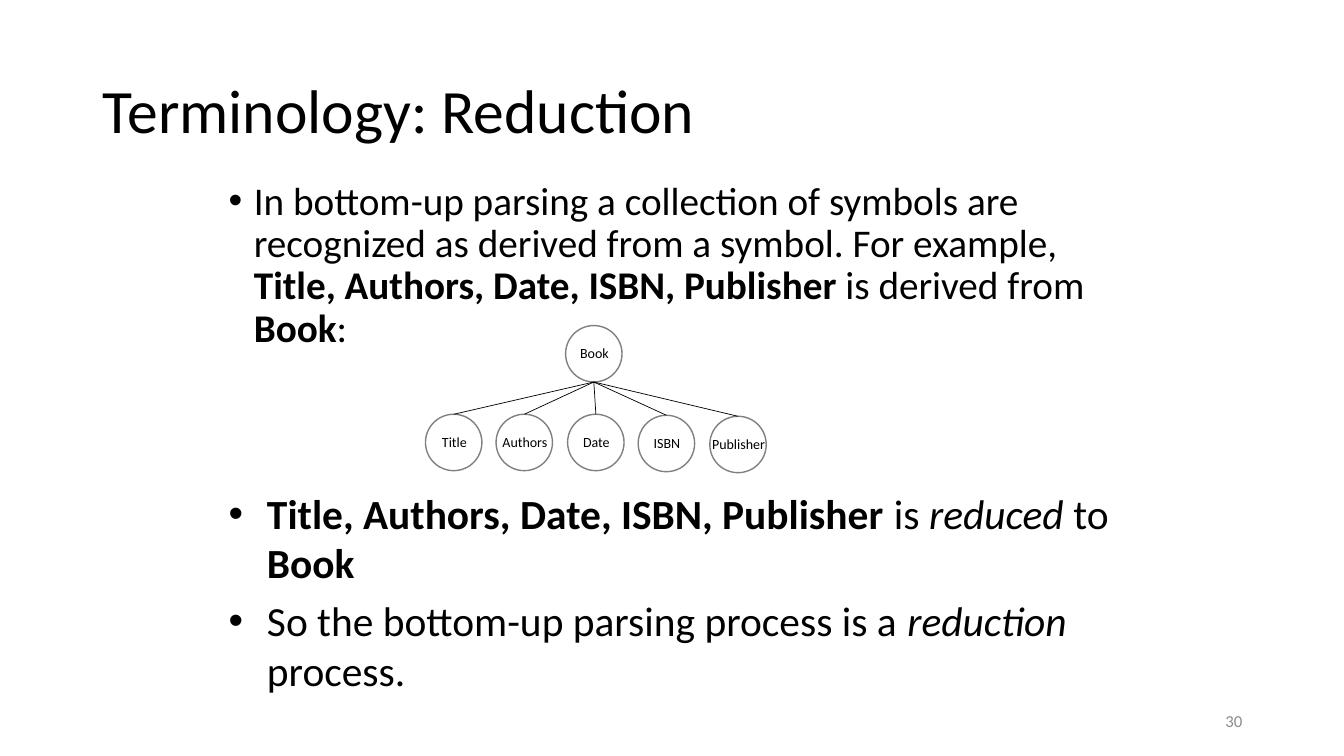
import pptx
import pptx.dml.color
import pptx.enum.shapes
import pptx.enum.text
import pptx.oxml.ns
import pptx.util
from dataclasses import dataclass
from lxml import etree
from pptx.util import Inches

ALIGN = pptx.enum.text.PP_ALIGN
ANCHOR = pptx.enum.text.MSO_ANCHOR


@dataclass(frozen=True)
class Theme:
    font: str = "Calibri"
    ink: str = "000000"
    muted: str = "8C8C8C"
    paper: str = "FFFFFF"
    outline: str = "808080"
    title_size: float = 44
    intro_size: float = 28
    conclusion_size: float = 29.6
    node_size: float = 10
    number_size: float = 12


THEME = Theme()
NODE_DIAMETER = 0.56
ROOT = ("Book", 5.61, 3.23, 0.49)
# Label, circle left, circle top, label width
LEAVES = [
    ("Title", 4.22, 4.11, 0.45),
    ("Authors", 4.92, 4.11, 0.65),
    ("Date", 5.63, 4.11, 0.47),
    ("ISBN", 6.33, 4.12, 0.47),
    ("Publisher", 7.04, 4.13, 0.73),
]
SYMBOLS = ", ".join(leaf[0] for leaf in LEAVES) + " "


def color(value):
    return pptx.dml.color.RGBColor.from_string(value)


def place(shape, left, top, width, height):
    shape.left, shape.top = Inches(left), Inches(top)
    shape.width, shape.height = Inches(width), Inches(height)


def add_bullet(para, indent):
    properties = para._p.get_or_add_pPr()
    properties.set("marL", str(Inches(indent)))
    properties.set("indent", str(-Inches(indent)))
    font = etree.SubElement(properties, pptx.oxml.ns.qn("a:buFont"))
    font.set("typeface", "Arial")
    bullet = etree.SubElement(properties, pptx.oxml.ns.qn("a:buChar"))
    bullet.set("char", "•")


def write_text(frame, paragraphs, *, size, ink=THEME.ink, align=ALIGN.LEFT,
               anchor=ANCHOR.TOP, wrap=True, line_spacing=None,
               space_before=0, bullet_indent=None):
    """Fill a frame; each paragraph is a list of (text, style) spans."""
    frame.auto_size = pptx.enum.text.MSO_AUTO_SIZE.NONE
    frame.word_wrap = wrap
    frame.vertical_anchor = anchor
    for index, spans in enumerate(paragraphs):
        para = frame.add_paragraph() if index else frame.paragraphs[0]
        para.alignment = align
        para.space_before = pptx.util.Pt(space_before)
        if line_spacing:
            para.line_spacing = line_spacing
        if bullet_indent:
            add_bullet(para, bullet_indent)
        for text, style in spans:
            span = para.add_run()
            span.text = text
            span.font.name = THEME.font
            span.font.size = pptx.util.Pt(size)
            span.font.color.rgb = color(ink)
            span.font.bold = style == "bold"
            span.font.italic = style == "italic"


def add_text(page, box, paragraphs, **text_format):
    shape = page.shapes.add_textbox(*map(Inches, box))
    write_text(shape.text_frame, paragraphs, **text_format)


def add_node(page, label, left, top, label_width):
    circle = page.shapes.add_shape(
        pptx.enum.shapes.MSO_SHAPE.OVAL, Inches(left), Inches(top),
        Inches(NODE_DIAMETER), Inches(NODE_DIAMETER))
    circle.shadow.inherit = False
    circle.fill.solid()
    circle.fill.fore_color.rgb = color(THEME.paper)
    circle.line.color.rgb = color(THEME.outline)
    circle.line.width = pptx.util.Pt(1)
    label_left = left + (NODE_DIAMETER - label_width) / 2 + 0.01
    add_text(page, (label_left, top + 0.14, label_width, 0.27),
             [[(label, "plain")]], size=THEME.node_size, wrap=False)
    return circle


def add_branch(page, parent, child):
    # Bottom of the parent circle to the top of the child circle
    branch = page.shapes.add_connector(
        pptx.enum.shapes.MSO_CONNECTOR.STRAIGHT,
        parent.left + parent.width // 2, parent.top + parent.height,
        child.left + child.width // 2, child.top)
    branch.line.color.rgb = color(THEME.ink)
    branch.line.width = pptx.util.Pt(0.5)
    etree.SubElement(branch._element.spPr, pptx.oxml.ns.qn("a:effectLst"))


def add_tree(page):
    root = add_node(page, *ROOT)
    leaves = [add_node(page, *leaf) for leaf in LEAVES]
    for leaf in leaves:
        add_branch(page, root, leaf)


def main():
    deck = pptx.Presentation()
    deck.slide_width, deck.slide_height = Inches(13.33), Inches(7.5)
    page = deck.slides.add_slide(deck.slide_layouts.get_by_name("Title Only"))

    # Title
    title = page.shapes.title
    place(title, 0.92, 0.4, 11.5, 1.45)
    write_text(title.text_frame, [[("Terminology: Reduction", "plain")]],
               size=THEME.title_size, anchor=ANCHOR.MIDDLE, line_spacing=0.9)

    # Introduction
    add_text(page, (2.17, 1.75, 9, 1.92), [[
        ("In bottom-up parsing a collection of symbols are recognized as "
         "derived from a symbol. For example, ", "plain"),
        (SYMBOLS, "bold"), ("is derived from ", "plain"),
        ("Book", "bold"), (":", "plain"),
    ]], size=THEME.intro_size, line_spacing=0.9, space_before=10,
        bullet_indent=0.25)

    # Page number
    add_text(page, (9.42, 6.95, 3, 0.4), [[("30", "plain")]],
             size=THEME.number_size, ink=THEME.muted, align=ALIGN.RIGHT,
             anchor=ANCHOR.MIDDLE)

    # Conclusions
    add_text(page, (2.17, 4.79, 9, 1.92), [
        [(SYMBOLS, "bold"), ("is ", "plain"), ("reduced", "italic"),
         (" to ", "plain"), ("Book", "bold")],
        [("So the bottom-up parsing process is a ", "plain"),
         ("reduction", "italic"), (" process.", "plain")],
    ], size=THEME.conclusion_size, space_before=5.9, bullet_indent=0.38)

    # Derivation tree
    add_tree(page)
    deck.save("out.pptx")


if __name__ == "__main__":
    main()
